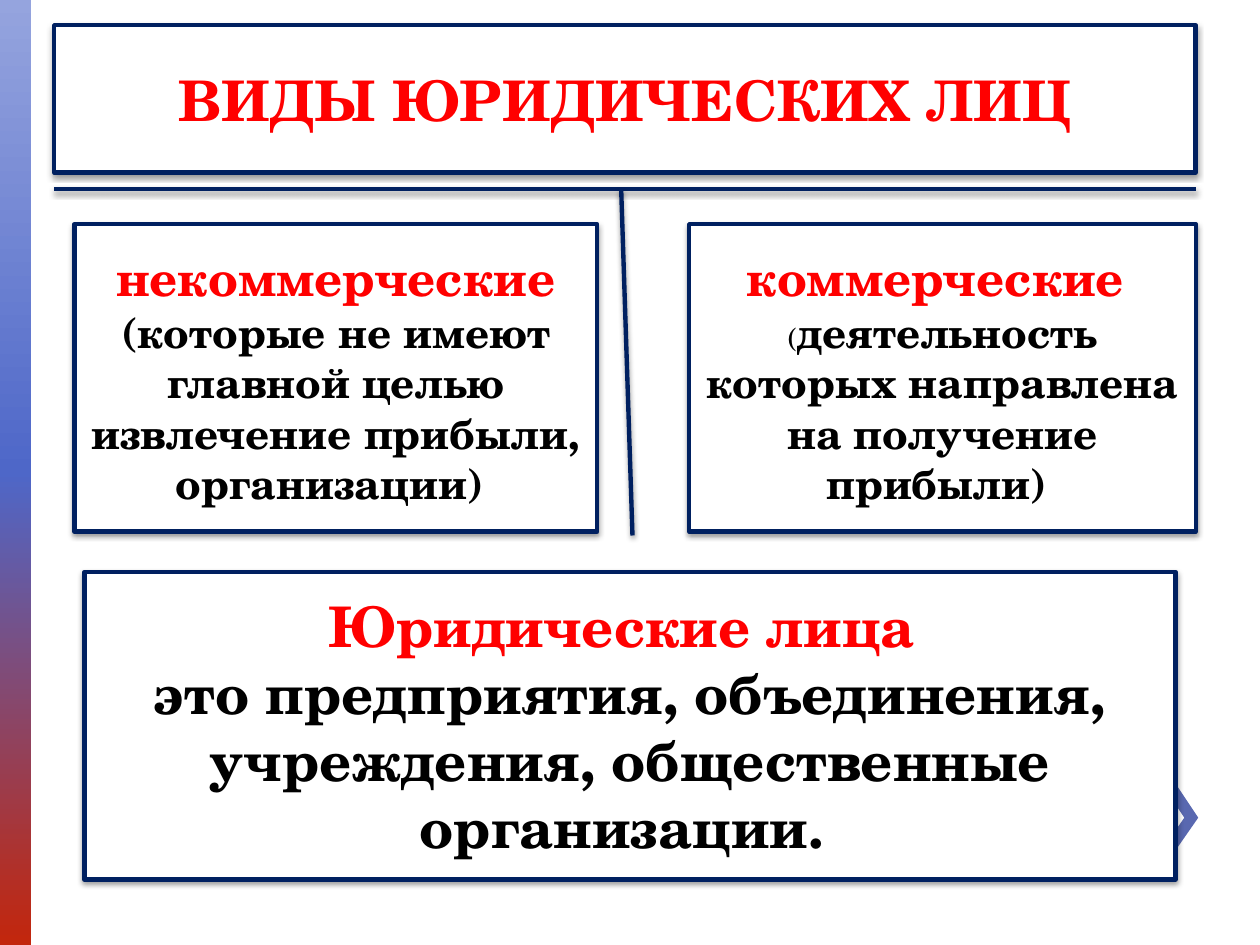
from pptx import Presentation
from pptx.dml.color import RGBColor
from pptx.enum.shapes import MSO_CONNECTOR, MSO_SHAPE
from pptx.enum.text import MSO_ANCHOR, MSO_AUTO_SIZE, PP_ALIGN
from pptx.oxml import parse_xml
from pptx.oxml.ns import nsdecls
from pptx.util import Inches, Pt

THEME = {
    "font": "TeX Gyre Schola",
    "white": RGBColor.from_string("FFFFFF"),
    "navy": RGBColor.from_string("002060"),
    "red": RGBColor.from_string("FF0000"),
    "black": RGBColor.from_string("000000"),
    "chevron": RGBColor.from_string("5968B0"),
    "strip": [(0, "95A4DE"), (50, "4E67C8"), (100, "C3260C")],
    "line": Pt(2.5),
    "large": Pt(32),
    "heading": Pt(28),
    "body": Pt(24),
    "small": Pt(16),
}


def outline_with_shadow(shape):
    shape.line.color.rgb = THEME["navy"]
    shape.line.width = THEME["line"]
    shape._element.spPr.append(parse_xml(
        f'<a:effectLst {nsdecls("a")}>'
        f'<a:outerShdw blurRad="{Pt(3.1)}" dist="{Pt(1.6)}" dir="5400000" rotWithShape="0">'
        '<a:srgbClr val="000000"><a:alpha val="38000"/></a:srgbClr>'
        '</a:outerShdw></a:effectLst>'))


def fill_box(shape, paragraphs):
    """Style a framed box; each paragraph lists (text, size, colour, bold)."""
    shape.fill.solid()
    shape.fill.fore_color.rgb = THEME["white"]
    outline_with_shadow(shape)
    frame = shape.text_frame
    frame.word_wrap = True
    frame.auto_size = MSO_AUTO_SIZE.NONE
    frame.vertical_anchor = MSO_ANCHOR.MIDDLE
    for index, runs in enumerate(paragraphs):
        paragraph = frame.add_paragraph() if index else frame.paragraphs[0]
        paragraph.alignment = PP_ALIGN.CENTER
        for text, size, colour, bold in runs:
            run = paragraph.add_run()
            run.text = text
            run.font.name = THEME["font"]
            run.font.size = THEME[size]
            run.font.color.rgb = THEME[colour]
            run.font.bold = bold


presentation = Presentation()
presentation.slide_width = Inches(10)
presentation.slide_height = Inches(7.5)
slide = presentation.slides.add_slide(presentation.slide_layouts[5])
shapes = slide.shapes

# Gradient strip on the left edge
strip = shapes.add_shape(MSO_SHAPE.RECTANGLE, 0, 0, Inches(0.25), Inches(7.5))
strip.shadow.inherit = False
strip.line.fill.background()
stops = "".join(f'<a:gs pos="{position * 1000}"><a:srgbClr val="{colour}"/></a:gs>'
                for position, colour in THEME["strip"])
strip._element.spPr.insert(2, parse_xml(
    f'<a:gradFill {nsdecls("a")}><a:gsLst>{stops}</a:gsLst>'
    '<a:lin ang="5400000" scaled="0"/></a:gradFill>'))

# Chevron behind the definition box
builder = shapes.build_freeform(Inches(9.35), Inches(6.25), scale=1.0)
builder.add_line_segments([(Inches(x), Inches(y)) for x, y in (
    (9.24, 6.25), (9.4, 6.49), (9.24, 6.72), (9.35, 6.72), (9.51, 6.49))], close=True)
chevron = builder.convert_to_shape()
chevron.shadow.inherit = False
chevron.fill.solid()
chevron.fill.fore_color.rgb = THEME["chevron"]
chevron.line.fill.background()

# Title
title = shapes.title
title.left, title.top = Inches(0.43), Inches(0.2)
title.width, title.height = Inches(9.06), Inches(1.17)
fill_box(title, [[("ВИДЫ ЮРИДИЧЕСКИХ ЛИЦ", "large", "red", True)]])

# Accent line under the title and the divider below it
for ends in ((0.43, 1.5, 9.49, 1.5), (4.93, 1.5, 5.02, 4.25)):
    connector = shapes.add_connector(MSO_CONNECTOR.STRAIGHT, *map(Inches, ends))
    outline_with_shadow(connector)

# Two kinds and the definition
boxes = [
    ((0.59, 1.78, 4.15, 2.44), [
        [("некоммерческие", "heading", "red", True)],
        [("(которые не имеют главной целью извлечение прибыли, организации) ",
          "body", "black", True)]]),
    ((5.47, 1.78, 4.02, 2.44), [
        [("коммерческие ", "heading", "red", True)],
        [("(", "small", "black", False),
         ("деятельность которых направлена на получение прибыли) ",
          "body", "black", True)]]),
    ((0.67, 4.54, 8.66, 2.44), [
        [("Юридические лица ", "large", "red", True)],
        [("это предприятия, объединения, учреждения, общественные организации. ",
          "large", "black", True)]]),
]
for position, paragraphs in boxes:
    box = shapes.add_shape(MSO_SHAPE.RECTANGLE, *map(Inches, position))
    fill_box(box, paragraphs)

presentation.save("out.pptx")
